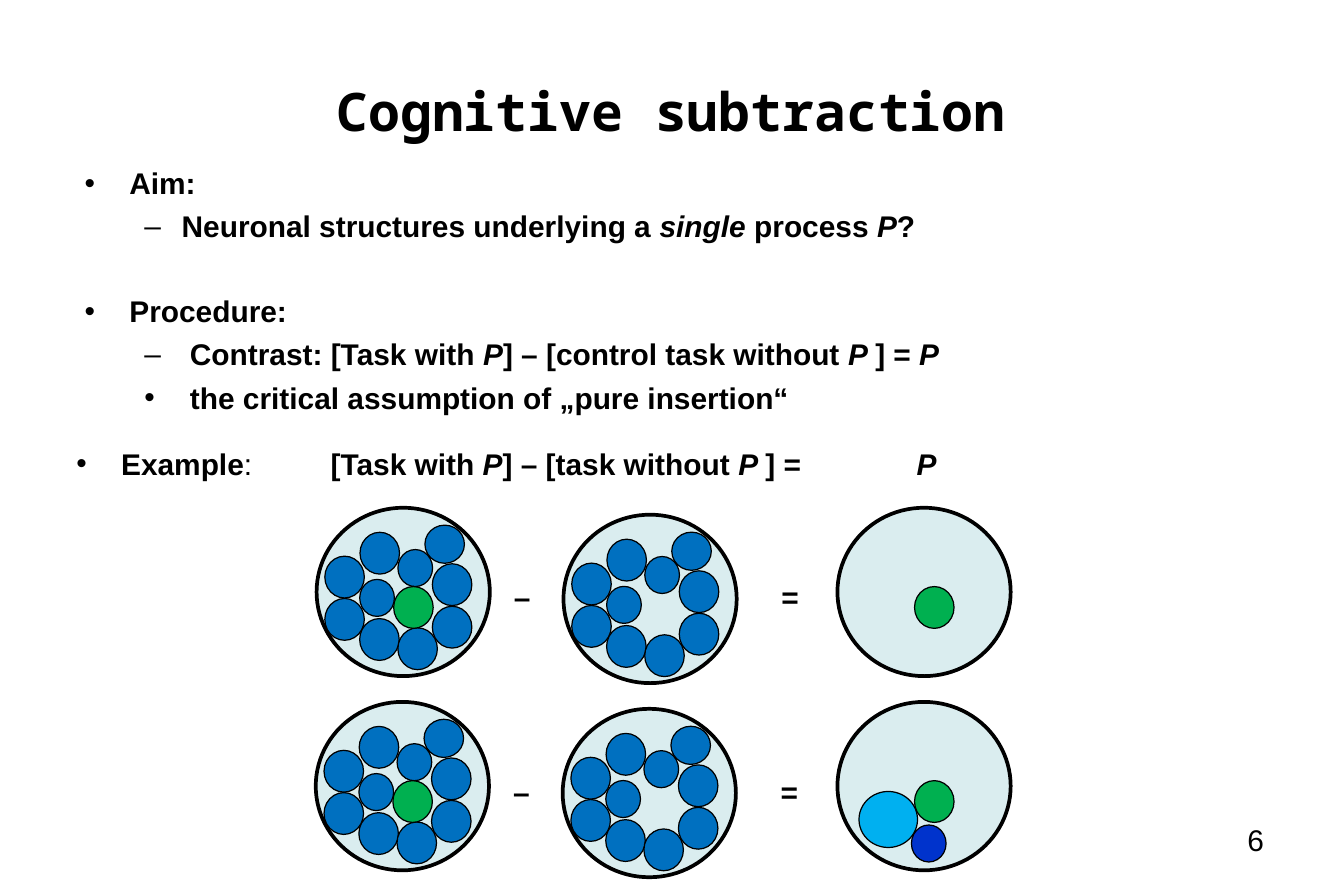
from dataclasses import dataclass

from lxml import etree
from pptx import Presentation
from pptx import util as u
from pptx.dml import color
from pptx.enum import shapes, text
from pptx.oxml import ns

Pt = u.Pt


@dataclass(frozen=True)
class Theme:
    black: str = "000000"
    white: str = "FFFFFF"
    disc: str = "DAEDEF"
    blue: str = "0070C0"
    green: str = "00B050"
    cyan: str = "00B0F0"
    navy: str = "0033CC"
    title_font: str = "Noto Sans Mono"
    body_font: str = "Arial"
    title_size: float = 32
    body_size: float = 18
    disc_line: float = 2.25
    cell_line: float = 0.75
    gap: float = 4.4          # space above a paragraph
    section_gap: float = 29.6  # space above a new section


THEME = Theme()
ITALIC = {"italic": True}
PLAIN = {"bold": False}

# Bullet levels: left margin, hanging indent
LEVELS = ((27, -27), (58.5, -22.5))

# Cells inside a disc: left, top, width, height from the disc's corner
DISC_SIZE = (104.4, 101.5)
CELL, SMALL = (23.8, 25.2), (20.9, 22.3)
BLUE_CELLS = [
    (5, 54.7, *CELL), (26, 66.8, *CELL), (49, 72.4, *CELL),
    (69.8, 59.4, *CELL), (69.8, 33.8, *CELL), (5, 29.2, *CELL),
    (26.2, 14.8, *CELL), (49, 25.2, *SMALL), (65.3, 10.5, 23.8, 23),
    (26, 43.2, *SMALL),
]
GREEN_CELL = (46.5, 47.5, *CELL)
CYAN_CELL = (13, 54, 35.3, 33.8)
NAVY_CELL = (44.6, 74.2, *SMALL)


def apply_format(target, values):
    for name, value in values.items():
        setattr(target, name, value)


def add_bullet(para, mark, level):
    margin, indent = LEVELS[level]
    props = para._p.get_or_add_pPr()
    props.set("marL", str(Pt(margin)))
    props.set("indent", str(Pt(indent)))
    etree.SubElement(props, ns.qn("a:buFont"), typeface=THEME.body_font)
    etree.SubElement(props, ns.qn("a:buChar"), char=mark)


def fill_para(para, spans, **font):
    """Each span is a string, or a (string, font values) pair."""
    base = {"name": THEME.body_font, "size": Pt(THEME.body_size), "bold": True}
    for span in spans:
        words, extra = (span, {}) if isinstance(span, str) else span
        run = para.add_run()
        run.text = words
        apply_format(run.font, {**base, **font, **extra})
        run.font.color.rgb = color.RGBColor.from_string(THEME.black)


def add_box(page, left, top, width, height, spans=(),
            align=text.PP_ALIGN.LEFT, anchor=text.MSO_ANCHOR.TOP, **font):
    box = page.shapes.add_textbox(Pt(left), Pt(top), Pt(width), Pt(height))
    apply_format(box.text_frame, {"word_wrap": True, "vertical_anchor": anchor})
    para = box.text_frame.paragraphs[0]
    para.alignment = align
    fill_para(para, spans, **font)
    return box


def add_outline(page):
    box = add_box(page, 43.9, 95.8, 720, 420)
    box.fill.solid()
    box.fill.fore_color.rgb = color.RGBColor.from_string(THEME.white)
    process = ("P", ITALIC)
    lines = [
        (0, "•", 0, ["Aim:"]),
        (1, "–", THEME.gap, ["Neuronal structures underlying a ",
                             ("single ", ITALIC), "process ", process, "?"]),
        (0, "•", THEME.section_gap, ["Procedure:"]),
        (1, "–", THEME.gap, [" Contrast: [Task with ", process,
                             "] – [control task without ", ("P ", ITALIC),
                             "] = ", process]),
        (1, "•", THEME.gap, [" the critical assumption of „pure insertion“"]),
    ]
    for number, (level, mark, gap, spans) in enumerate(lines):
        frame = box.text_frame
        para = frame.add_paragraph() if number else frame.paragraphs[0]
        para.space_before = Pt(gap)
        add_bullet(para, mark, level)
        fill_para(para, spans)


def add_example_heading(page):
    box = add_box(page, 38.9, 265, 140, 30, ["Example", (":", PLAIN)])
    add_bullet(box.text_frame.paragraphs[0], "•", 0)
    add_box(page, 192.2, 265, 330, 30,
            ["[Task with ", ("P", ITALIC), "] – [task without ",
             ("P ", ITALIC), "] ="])
    add_box(page, 545.4, 265, 40, 30, [("P", ITALIC)])


def add_oval(page, left, top, width, height, fill, line):
    oval = page.shapes.add_shape(shapes.MSO_SHAPE.OVAL, Pt(left), Pt(top),
                                 Pt(width), Pt(height))
    oval.shadow.inherit = False
    oval.fill.solid()
    oval.fill.fore_color.rgb = color.RGBColor.from_string(fill)
    oval.line.color.rgb = color.RGBColor.from_string(THEME.black)
    oval.line.width = Pt(line)


def add_disc(page, left, top, cells):
    add_oval(page, left, top, *DISC_SIZE, THEME.disc, THEME.disc_line)
    for (dx, dy, width, height), fill in cells:
        add_oval(page, left + dx, top + dy, width, height, fill,
                 THEME.cell_line)


def add_subtraction(page, top, shift, extra_result):
    control = [(cell, THEME.blue) for cell in BLUE_CELLS]
    process = [(GREEN_CELL, THEME.green)]
    add_disc(page, 190.8 + shift, top, control + process)
    add_disc(page, 339.6 + shift, top + 4.2, control)
    add_disc(page, 504.7, top, process + extra_result)
    for sign, center in (("–", 314.7), ("=", 476.2)):
        add_box(page, center - 20 + shift, top + 39.5, 40, 28, [sign],
                align=text.PP_ALIGN.CENTER)


def main():
    deck = Presentation()
    apply_format(deck, {"slide_width": Pt(810), "slide_height": Pt(540)})
    page = deck.slides.add_slide(deck.slide_layouts[6])

    # Outline, with the example heading over it
    add_outline(page)
    add_example_heading(page)

    # Title
    add_box(page, 40.3, 21.6, 728.6, 90, ["Cognitive subtraction"],
            align=text.PP_ALIGN.CENTER, anchor=text.MSO_ANCHOR.MIDDLE,
            name=THEME.title_font, size=Pt(THEME.title_size))

    # Pure insertion, then a result with further processes
    add_subtraction(page, 306, 0, [])
    add_subtraction(page, 423, -0.5,
                    [(CYAN_CELL, THEME.cyan), (NAVY_CELL, THEME.navy)])

    # Page number
    add_box(page, 580.3, 491.8, 188.6, 37.4, ["6"],
            align=text.PP_ALIGN.RIGHT, bold=False)

    deck.save("out.pptx")


if __name__ == "__main__":
    main()
